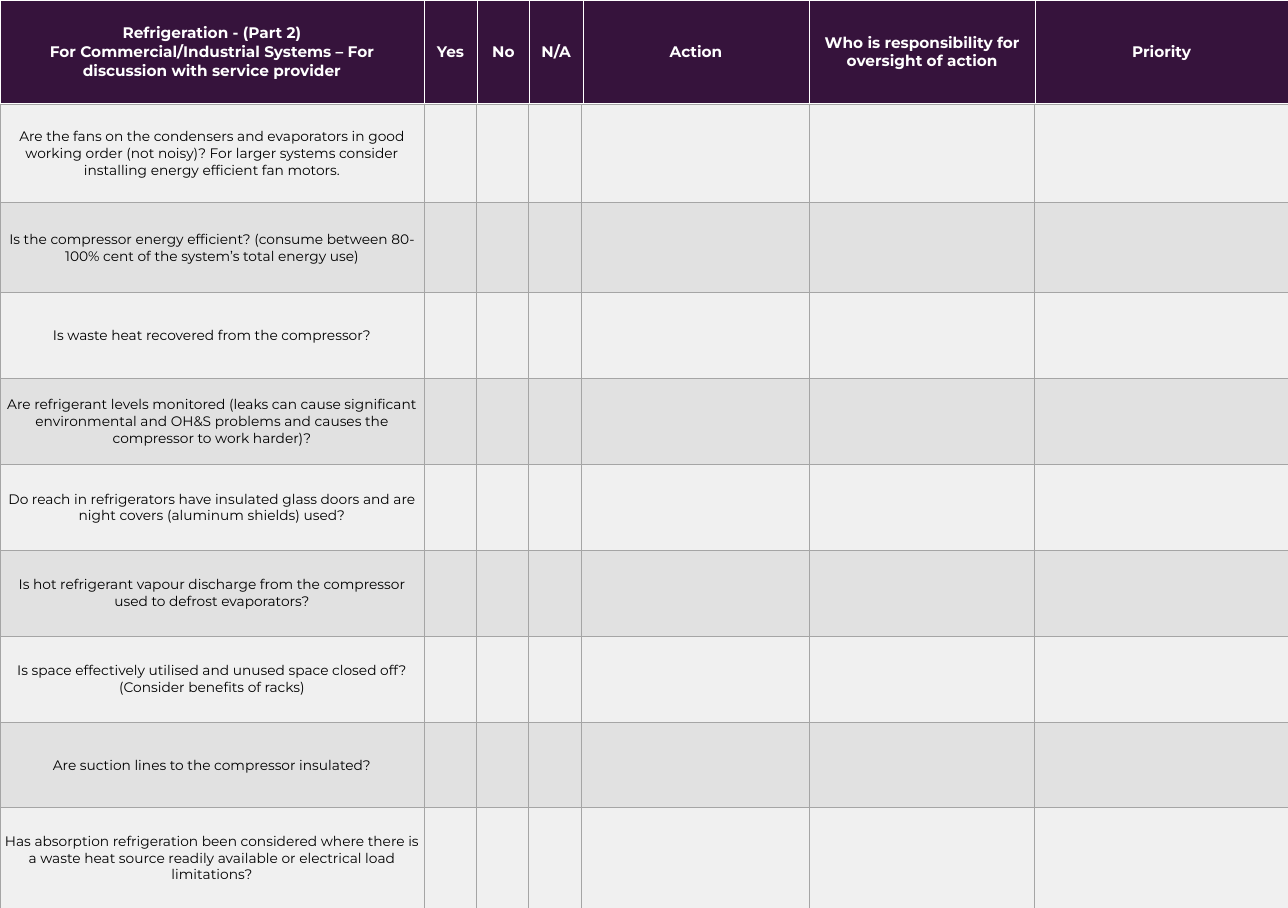
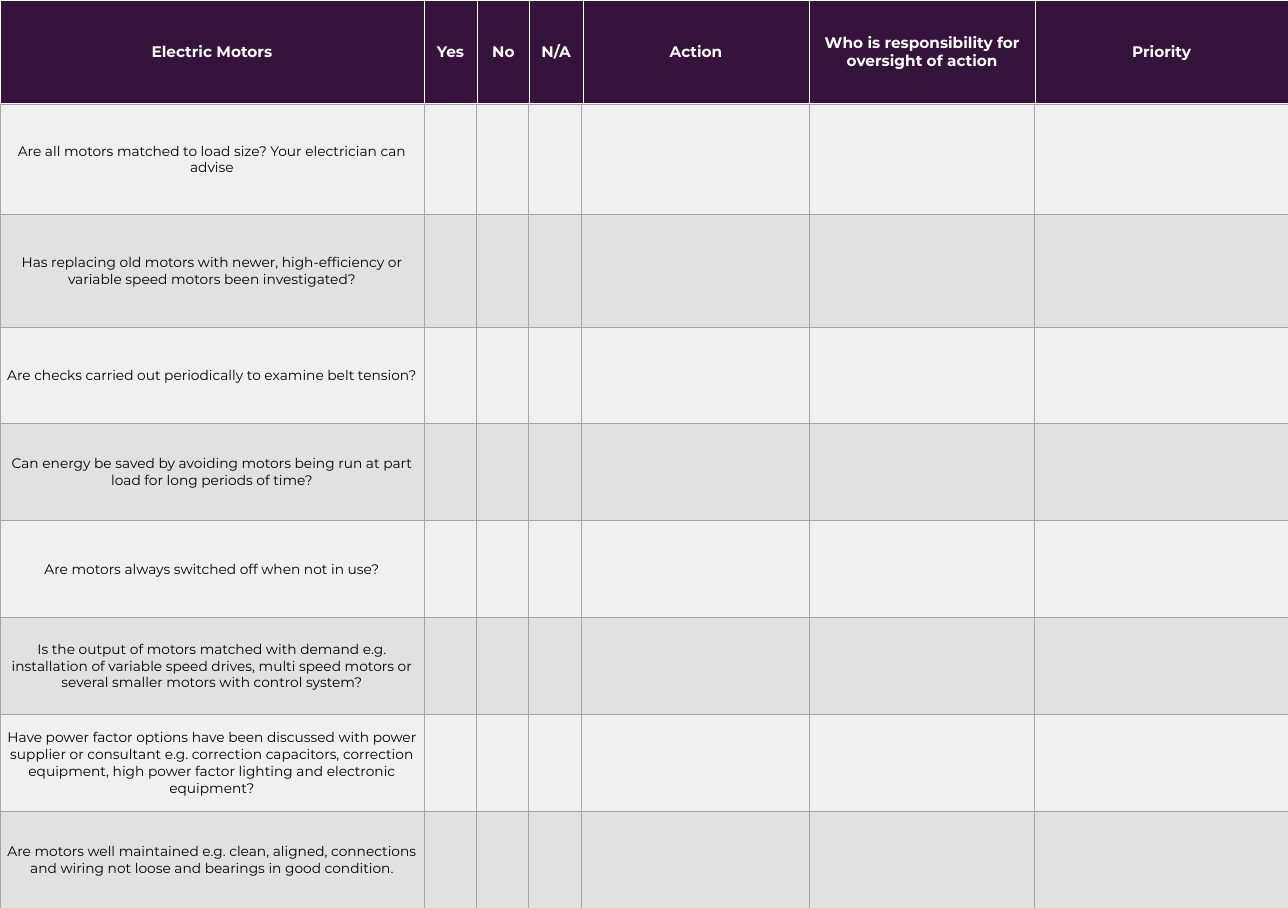
from lxml.etree import SubElement
from pptx import Presentation
from pptx.dml.color import RGBColor
from pptx.enum.text import MSO_ANCHOR, PP_ALIGN
from pptx.oxml.ns import qn
from pptx.util import Pt

PX = 9144  # EMU per px, 100 px to the inch
SLIDE_WIDTH, SLIDE_HEIGHT = 2340, 1650
HEADER_HEIGHT = 189

PURPLE = RGBColor(0x36, 0x13, 0x3C)
WHITE = RGBColor(0xFF, 0xFF, 0xFF)
BLACK = RGBColor(0x00, 0x00, 0x00)
BORDER_GREY = RGBColor(0xA5, 0xA5, 0xA5)
BANDS = [RGBColor(0xF0, 0xF0, 0xF0), RGBColor(0xE1, 0xE1, 0xE1)]
FONT = "Montserrat"

HEADER_WIDTHS = [770, 97, 95, 97, 411, 411, 459]
BODY_WIDTHS = [770, 95, 95, 97, 414, 408, 461]
ANSWER_HEADINGS = [
    "Yes", "No", "N/A", "Action",
    "Who is responsibility for oversight of action", "Priority",
]

CHECKLISTS = [
    (
        "Refrigeration - (Part 2)\n"
        "For Commercial/Industrial Systems – For discussion with service provider",
        [179, 164] + [156] * 6 + [182],
        [
            "Are the fans on the condensers and evaporators in good working order "
            "(not noisy)? For larger systems consider installing energy efficient "
            "fan motors.",
            "Is the compressor energy efficient? (consume between 80-100% cent of "
            "the system’s total energy use)",
            "Is waste heat recovered from the compressor?",
            "Are refrigerant levels monitored (leaks can cause significant "
            "environmental and OH&S problems and causes the compressor to work "
            "harder)?",
            "Do reach in refrigerators have insulated glass doors and are night "
            "covers (aluminum shields) used?",
            "Is hot refrigerant vapour discharge from the compressor used to "
            "defrost evaporators?",
            "Is space effectively utilised and unused space closed off? (Consider "
            "benefits of racks)",
            "Are suction lines to the compressor insulated?",
            "Has absorption refrigeration been considered where there is a waste "
            "heat source readily available or electrical load limitations?",
        ],
    ),
    (
        "Electric Motors",
        [201, 204] + [176] * 6,
        [
            "Are all motors matched to load size? Your electrician can advise",
            "Has replacing old motors with newer, high-efficiency or variable "
            "speed motors been investigated?",
            "Are checks carried out periodically to examine belt tension?",
            "Can energy be saved by avoiding motors being run at part load for "
            "long periods of time?",
            "Are motors always switched off when not in use?",
            "Is the output of motors matched with demand e.g. installation of "
            "variable speed drives, multi speed motors or several smaller motors "
            "with control system?",
            "Have power factor options have been discussed with power supplier or "
            "consultant e.g. correction capacitors, correction equipment, high "
            "power factor lighting and electronic equipment?",
            "Are motors well maintained e.g. clean, aligned, connections and "
            "wiring not loose and bearings in good condition.",
        ],
    ),
]


def write_cell(cell, text, *, size, color, fill, border, bottom=1, bold=False):
    """Set a cell's borders (widths in points), fill and centred text."""
    properties = cell._tc.get_or_add_tcPr()
    for side, width in (("lnL", 1), ("lnR", 1), ("lnT", 1), ("lnB", bottom)):
        line = SubElement(properties, qn(f"a:{side}"), w=str(Pt(width)))
        solid = SubElement(line, qn("a:solidFill"))
        SubElement(solid, qn("a:srgbClr"), val=str(border))
    cell.fill.solid()
    cell.fill.fore_color.rgb = fill
    cell.vertical_anchor = MSO_ANCHOR.MIDDLE
    if not text:
        return
    cell.text_frame.text = text
    for paragraph in cell.text_frame.paragraphs:
        paragraph.alignment = PP_ALIGN.CENTER
        font = paragraph.runs[0].font
        font.name, font.size, font.bold = FONT, Pt(size), bold
        font.color.rgb = color


def add_grid(slide, top, widths, heights):
    """Add an unbanded table at the left edge and return it."""
    frame = slide.shapes.add_table(
        len(heights), len(widths),
        0, top * PX, sum(widths) * PX, sum(heights) * PX,
    )
    table = frame.table
    table.first_row = table.horz_banding = False
    for column, width in zip(table.columns, widths):
        column.width = width * PX
    for row, height in zip(table.rows, heights):
        row.height = height * PX
    return table


presentation = Presentation()
presentation.slide_width = SLIDE_WIDTH * PX
presentation.slide_height = SLIDE_HEIGHT * PX
blank_layout = presentation.slide_layouts[6]

for topic, row_heights, questions in CHECKLISTS:
    slide = presentation.slides.add_slide(blank_layout)

    header = add_grid(slide, 0, HEADER_WIDTHS, [HEADER_HEIGHT])
    for cell, heading in zip(header.rows[0].cells, [topic] + ANSWER_HEADINGS):
        write_cell(cell, heading, size=20, color=WHITE, fill=PURPLE,
                   border=WHITE, bottom=3, bold=True)

    body = add_grid(slide, HEADER_HEIGHT, BODY_WIDTHS, row_heights)
    for index, (row, question) in enumerate(zip(body.rows, questions)):
        for column, cell in enumerate(row.cells):
            write_cell(cell, question if column == 0 else "", size=18,
                       color=BLACK, fill=BANDS[index % 2], border=BORDER_GREY)
        question_cell = row.cells[0]
        question_cell.margin_left = question_cell.margin_right = PX
        question_cell.margin_top, question_cell.margin_bottom = PX, 0

presentation.save("out.pptx")
